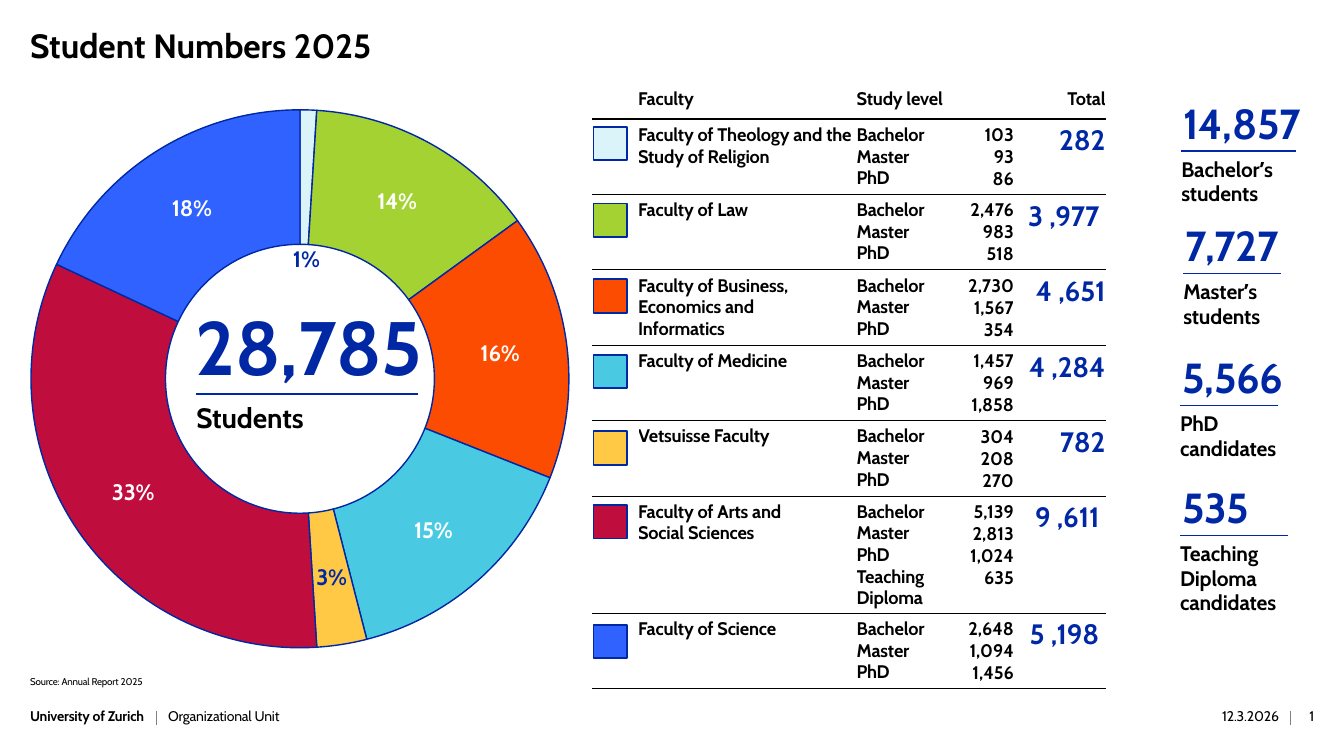
from copy import deepcopy

from lxml.etree import SubElement
from pptx import Presentation
from pptx.chart.data import CategoryChartData
from pptx.dml.color import RGBColor
from pptx.enum.chart import XL_CHART_TYPE
from pptx.enum.shapes import MSO_CONNECTOR, MSO_SHAPE
from pptx.enum.text import MSO_ANCHOR, MSO_AUTO_SIZE, PP_ALIGN
from pptx.oxml import parse_xml
from pptx.oxml.ns import nsdecls, qn
from pptx.util import Cm, Pt

FONT = "Cabin"
BLUE, BLACK, WHITE, GREY = "0028A5", "000000", "FFFFFF", "808080"
LEFT, RIGHT = PP_ALIGN.LEFT, PP_ALIGN.RIGHT
rgb = RGBColor.from_string


def write(tf, text, size, color=BLACK, bold=True, align=LEFT, spacing=0.98, track=-10):
    """Fill a text frame; track is the letter spacing in hundredths of a point."""
    tf.text = text
    tf.word_wrap = True
    for p in tf.paragraphs:
        p.alignment = align
        p.line_spacing = spacing
        for r in p.runs:
            r.font.name = FONT
            r.font.size = Pt(size)
            r.font.bold = bold
            r.font.color.rgb = rgb(color)
            r.font._element.set("spc", str(track))
        for br in p._p.findall(qn("a:br")):
            br.append(deepcopy(p.runs[0].font._element))


prs = Presentation()
prs.slide_width, prs.slide_height = Cm(33.87), Cm(19.05)
s = prs.slides.add_slide(prs.slide_layouts[5])

# Title
title = s.shapes.title
title.left, title.top, title.width, title.height = Cm(0.76), Cm(0.69), Cm(32.36), Cm(1.73)
tf = title.text_frame
tf.margin_left = tf.margin_right = tf.margin_top = tf.margin_bottom = 0
tf.vertical_anchor = MSO_ANCHOR.TOP
tf.auto_size = MSO_AUTO_SIZE.NONE
write(tf, "Student Numbers 2025", 24, spacing=0.97, track=0)

# Faculties: name, share, colour, swatch top, row height, counts, total
faculties = [
    ("Faculty of Theology and the Study of Religion", 1, "DBF4F9", 3.2, 1.88,
     "103\n93\n86", "282"),
    ("Faculty of Law", 14, "A4D233", 5.13, 1.9, "2,476\n983\n518", "3 ,977 "),
    ("Faculty of Business, Economics and \vInformatics", 16, "FC4C02", 7.04, 1.9,
     "2,730\n1,567\n354", "4 ,651"),
    ("Faculty of Medicine", 15, "4AC9E3", 8.94, 1.9, "1,457\n969\n1,858", "4 ,284"),
    ("Vetsuisse Faculty", 3, "FFC845", 10.87, 1.9, "304\n208\n270", "782"),
    ("Faculty of Arts and \vSocial Sciences", 33, "BF0D3E", 12.73, 2.46,
     "5,139\n2,813\n1,024\n635", "9 ,611 "),
    ("Faculty of Science", 18, "3062FF", 15.75, 1.9, "2,648\n1,094\n1,456", "5 ,198 "),
]

# Doughnut chart
data = CategoryChartData()
data.categories = [str(i + 1) for i in range(len(faculties))]
data.add_series("Series 1", [f[1] for f in faculties])
chart = s.shapes.add_chart(XL_CHART_TYPE.DOUGHNUT, Cm(0.74), Cm(-0.23),
                           Cm(13.82), Cm(17.32), data).chart
chart.has_legend = False
chart.has_title = False
chart.font.name, chart.font.size = FONT, Pt(20)
plot = chart.plots[0]
plot.vary_by_categories = True
plot._element.find(qn("c:holeSize")).set("val", "65")
series = plot.series[0]
labels = series.data_labels
labels.show_percentage, labels.show_value = True, False
labels.number_format, labels.number_format_is_linked = "0%", False
label_fonts = [(labels.font, WHITE)]
label_fonts += [(series.points[i].data_label.font, BLUE) for i in (0, 4)]
for font, color in label_fonts:
    font.name, font.size, font.bold = FONT, Pt(16), True
    font.color.rgb = rgb(color)
for label in series._element.iter(qn("c:dLbl")):
    label.find(qn("c:showVal")).set("val", "0")
    label.find(qn("c:showPercent")).set("val", "1")
theology_label = next(series._element.iter(qn("c:dLbl")))
theology_label.insert(1, parse_xml(
    f'<c:layout {nsdecls("c")}><c:manualLayout><c:x val="0"/><c:y val="0.12"/>'
    '</c:manualLayout></c:layout>'))
for i, faculty in enumerate(faculties):
    fmt = series.points[i].format
    fmt.fill.solid()
    fmt.fill.fore_color.rgb = rgb(faculty[2])
    fmt.line.color.rgb = rgb(BLUE)
    fmt.line.width = Pt(1)
plot_area = chart._chartSpace.chart.plotArea
for old in plot_area.findall(qn("c:layout")):
    plot_area.remove(old)
plot_area.insert(0, parse_xml(
    f'<c:layout {nsdecls("c")}><c:manualLayout><c:layoutTarget val="inner"/>'
    '<c:xMode val="edge"/><c:yMode val="edge"/><c:x val="0.003"/><c:y val="0.173"/>'
    '<c:w val="0.981"/><c:h val="0.783"/></c:manualLayout></c:layout>'))

# Faculty table
table = s.shapes.add_table(len(faculties) + 1, 5, Cm(14.94), Cm(1.68),
                           Cm(12.92), Cm(15.16)).table
table.first_row = table.horz_banding = False
for col, width in zip(table.columns, (1.14, 5.51, 2.74, 1.22, 2.31)):
    col.width = Cm(width)
rows = [("", "Faculty", "Study level", "", "Total")]
table.rows[0].height = Cm(1.32)
for row, (name, _, _, _, height, counts, total) in zip(list(table.rows)[1:], faculties):
    row.height = Cm(height)
    levels = "Bachelor\nMaster\nPhD"
    if counts.count("\n") == 3:
        levels += "\nTeaching Diploma"
    rows.append(("", name, levels, counts, total))
for i, texts in enumerate(rows):
    for j, text in enumerate(texts):
        cell = table.cell(i, j)
        cell.fill.background()
        cell.margin_left = cell.margin_right = 0
        cell.margin_top = Cm(0.13 if i else 0)
        cell.margin_bottom = Cm(0.1 if i else 0.23)
        cell.vertical_anchor = MSO_ANCHOR.TOP if i else MSO_ANCHOR.BOTTOM
        is_count, is_total = j == 3, i > 0 and j == 4
        if text:
            write(cell.text_frame, text, 20 if is_total else 13, BLUE if is_total else BLACK,
                  align=RIGHT if j > 2 else LEFT, spacing=1.0 if is_count else 0.98,
                  track=0 if is_count else -10)
        borders = [("lnB", 0.5 if i else 1)]
        if i:
            borders.insert(0, ("lnT", 1 if i == 1 else 0.5))
        for k, (side, width) in enumerate(borders):
            cell._tc.get_or_add_tcPr().insert(k, parse_xml(
                f'<a:{side} {nsdecls("a")} w="{Pt(width)}"><a:solidFill>'
                f'<a:srgbClr val="{BLACK}"/></a:solidFill></a:{side}>'))

# Legend swatches
for _, _, color, top, *_ in faculties:
    sp = s.shapes.add_shape(MSO_SHAPE.RECTANGLE, Cm(14.96), Cm(top), Cm(0.84), Cm(0.84))
    sp.shadow.inherit = False
    sp.fill.solid()
    sp.fill.fore_color.rgb = rgb(color)
    sp.line.color.rgb = rgb(BLUE)
    sp.line.width = Pt(1.25)

# Text boxes: left, top, width, height, text, size, colour, bold, alignment
boxes = [
    (4.93, 7.67, 5.74, 2.11, "28,785", 54, BLUE, True, LEFT),
    (4.95, 10.13, 4.72, 1, "Students", 20, BLACK, True, LEFT),
    (0.76, 17.04, 10.16, 0.3, "Source: Annual Report 2025", 7, BLACK, False, LEFT),
    (0.76, 17.86, 3.1, 0.41, "University of Zurich", 10, BLACK, True, LEFT),
    (4.24, 17.86, 22.02, 0.41, "Organizational Unit", 10, BLACK, False, LEFT),
    (28.93, 17.86, 3.3, 0.41, "12.3.2026", 10, BLACK, False, RIGHT),
    (32.54, 17.86, 0.58, 0.41, "1", 10, BLACK, False, RIGHT),
]
# Lines: start x, start y, end x, end y, colour, width
lines = [
    (4.93, 9.93, 10.54, 9.93, BLUE, 1.25),
    (3.94, 17.91, 3.94, 18.26, GREY, 0.5),
    (32.51, 17.91, 32.51, 18.26, GREY, 0.5),
]
# Totals by study level: left, top, right end of the rule
for left, top, end, number, level in [
    (29.77, 2.51, 32.66, "14,857", "Bachelorʼs students"),
    (29.82, 5.59, 32.28, "7,727", "Masterʼs students"),
    (29.74, 8.92, 32.21, "5,566", "PhD \vcandidates"),
    (29.74, 12.19, 32.46, "535", "Teaching Diploma candidates"),
]:
    boxes.append((left + 0.05, top, 3.61, 1.35, number, 30, BLUE, True, LEFT))
    boxes.append((left, top + 1.46, 3.66, 0.69, level, 15, BLACK, True, LEFT))
    lines.append((left, top + 1.3, end, top + 1.3, BLUE, 1))

for left, top, width, height, text, size, color, bold, align in boxes:
    tf = s.shapes.add_textbox(Cm(left), Cm(top), Cm(width), Cm(height)).text_frame
    tf.margin_left = tf.margin_right = tf.margin_top = tf.margin_bottom = 0
    write(tf, text, size, color, bold, align)

for x1, y1, x2, y2, color, width in lines:
    rule = s.shapes.add_connector(MSO_CONNECTOR.STRAIGHT, Cm(x1), Cm(y1), Cm(x2), Cm(y2))
    rule.line.color.rgb = rgb(color)
    rule.line.width = Pt(width)
    SubElement(rule._element.spPr, qn("a:effectLst"))

prs.save("out.pptx")
